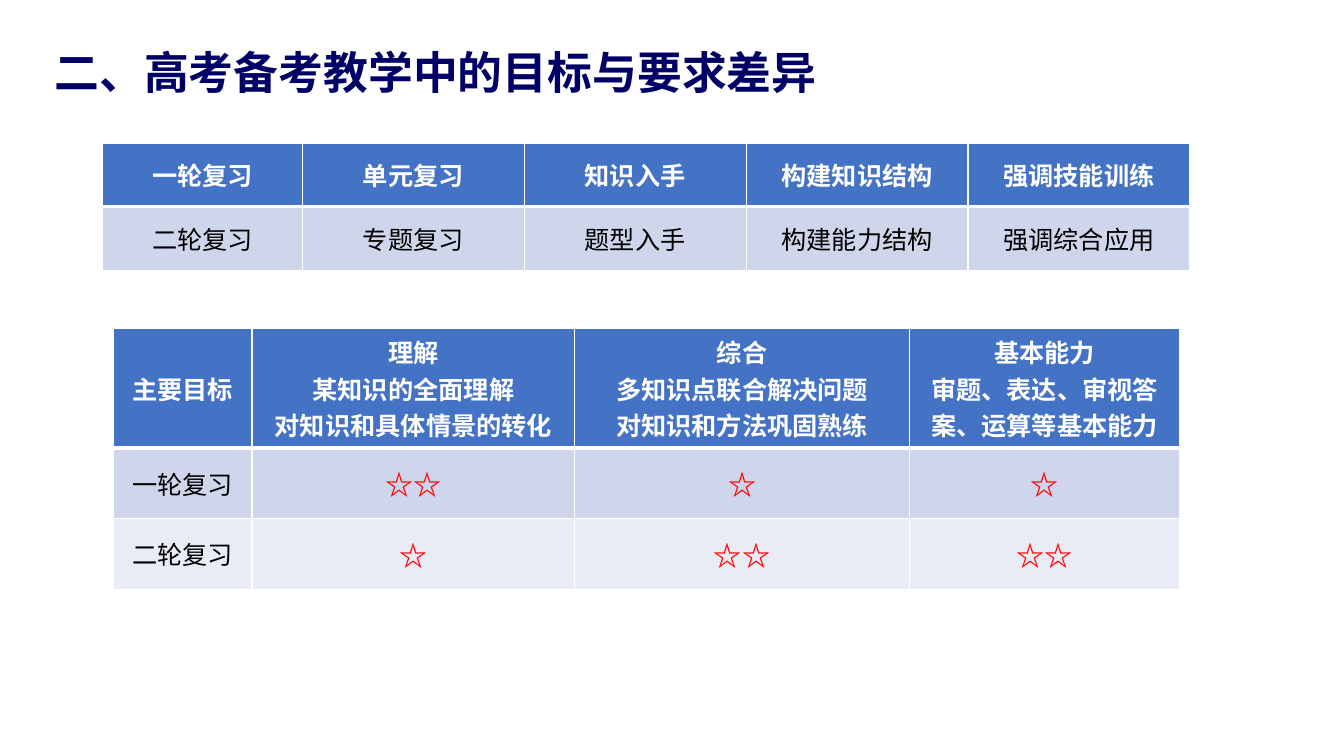
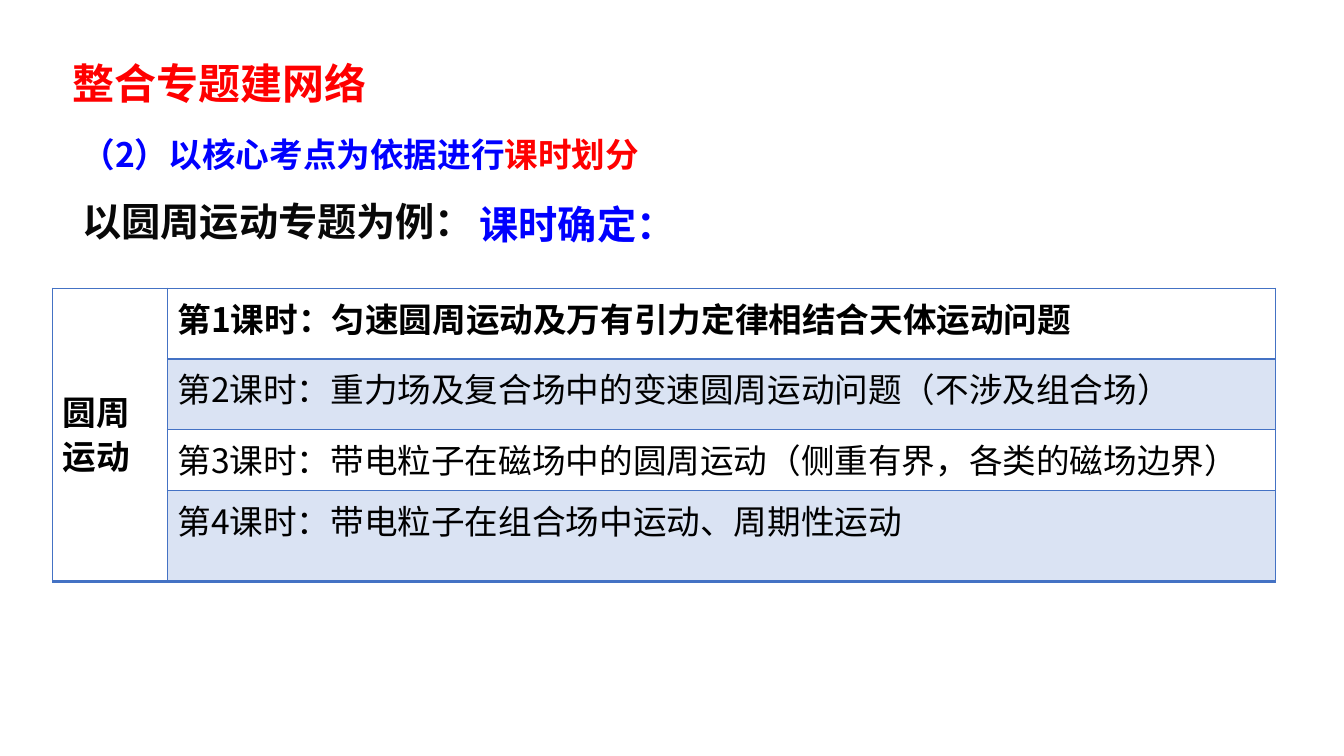
import pptx
import pptx.util
import pptx.dml.color
import pptx.enum.text
import pptx.oxml
import pptx.oxml.ns
import lxml.etree

RGB = pptx.dml.color.RGBColor
ALIGN = pptx.enum.text.PP_ALIGN
ANCHOR = pptx.enum.text.MSO_ANCHOR
FIT = pptx.enum.text.MSO_AUTO_SIZE

PX = 9144
WIDE, HIGH = 1333, 750

WHITE = RGB(0xFF, 0xFF, 0xFF)
BLACK = RGB(0x00, 0x00, 0x00)
INK = RGB(0x08, 0x08, 0x08)
NAVY = RGB(0x00, 0x00, 0x66)
RED = RGB(0xFF, 0x00, 0x00)
BLUE = RGB(0x00, 0x00, 0xFF)
HEAD = RGB(0x44, 0x72, 0xC4)
BAND = RGB(0xCF, 0xD5, 0xEA)
PALE = RGB(0xE9, 0xEB, 0xF5)
TINT = RGB(0xDA, 0xE3, 0xF3)

SANS = "Noto Sans CJK SC"


def style(size, color, bold=True, name=SANS):
    return {"size": pptx.util.Pt(size), "bold": bold, "name": name, "color": color}


TITLE = style(32, NAVY, name="Calibri")
TOPIC = style(30, RED)
POINT = style(24, BLUE)
CASE = style(28, INK)
HOURS = style(28, BLUE)
LABEL = style(18, WHITE)
PLAIN = style(18, BLACK, False)
STAR = style(20, RED)
FIRST = style(24, BLACK)
LESSON = style(24, BLACK, False)


def emu(*box):
    return [pptx.util.Emu(n * PX) for n in box]


def put(item, values):
    for name, value in values.items():
        setattr(item, name, value)


def write(para, text, form):
    run = para.add_run()
    run.text = text
    put(run.font, {k: v for k, v in form.items() if k != "color"})
    run.font.color.rgb = form["color"]
    east = lxml.etree.SubElement(run._r.get_or_add_rPr(), pptx.oxml.ns.qn("a:ea"))
    east.set("typeface", SANS)


def label(slide, box, runs, inset=True, **form):
    frame = slide.shapes.add_textbox(*emu(*box)).text_frame
    put(frame, {"word_wrap": True, "auto_size": FIT.NONE})
    if not inset:
        sides = ("left", "top", "right", "bottom")
        put(frame, {"margin_" + side: 0 for side in sides})
    para = frame.paragraphs[0]
    put(para, form)
    for text, look in runs:
        write(para, text, look)


def edge(cell, color, widths):
    props = cell._tc.get_or_add_tcPr()
    for side, width in zip("LRTB", widths):
        props.append(pptx.oxml.parse_xml(
            f'<a:ln{side} {pptx.oxml.ns.nsdecls("a")} w="{pptx.util.Pt(width)}">'
            f'<a:solidFill><a:srgbClr val="{color}"/></a:solidFill></a:ln{side}>'))


def grid(slide, spot, cols, rows, cells, look, line, rule, foot, align, anchor):
    box = (*spot, sum(cols), sum(rows))
    table = slide.shapes.add_table(len(rows), len(cols), *emu(*box)).table
    put(table, {"first_row": False, "horz_banding": False})
    for col, width in zip(table.columns, emu(*cols)):
        col.width = width
    for row, height in zip(table.rows, emu(*rows)):
        row.height = height
    bars = [1, rule] + [1] * (len(rows) - 2) + [foot]
    for y, texts in enumerate(cells):
        for x, text in enumerate(texts):
            cell = table.cell(y, x)
            form, fill = look(y, x)
            edge(cell, line, (1, 1, bars[y], bars[y + 1]))
            if fill is None:
                cell.fill.background()
            else:
                cell.fill.solid()
                cell.fill.fore_color.rgb = fill
            cell.vertical_anchor = anchor
            frame = cell.text_frame
            for n, part in enumerate(text.split("\n") if text else []):
                para = frame.add_paragraph() if n else frame.paragraphs[0]
                para.alignment = align
                write(para, part, form)
    return table


def review(slide, spot, cols, rows, cells, body):
    def look(y, x):
        if y == 0:
            return LABEL, HEAD
        return (body if x else PLAIN), (BAND if y % 2 else PALE)

    grid(slide, spot, cols, rows, cells, look, WHITE, 3, 1, ALIGN.CENTER, ANCHOR.MIDDLE)


def plan(slide, spot, cols, rows, lessons):
    def look(y, x):
        return (LESSON if y else FIRST), (TINT if x and y % 2 else None)

    cells = [("" if n else "圆周运动", f"第{n + 1}课时：{text}")
             for n, text in enumerate(lessons)]
    table = grid(slide, spot, cols, rows, cells, look, HEAD, 2, 2, ALIGN.LEFT, ANCHOR.TOP)
    side = table.cell(0, 0)
    side.merge(table.cell(len(rows) - 1, 0))
    put(side, {"vertical_anchor": ANCHOR.MIDDLE, "margin_top": 0, "margin_bottom": 0})
    side.text_frame.paragraphs[0].line_spacing = pptx.util.Pt(32)


def goals(slide):
    label(slide, (54, 50, 982, 58), [("二、高考备考教学中的目标与要求差异", TITLE)],
          inset=False, line_spacing=0.9, space_after=pptx.util.Pt(8))
    review(slide, (102, 142), [198] + [220] * 4, [63] * 2, [
        ("一轮复习", "单元复习", "知识入手", "构建知识结构", "强调技能训练"),
        ("二轮复习", "专题复习", "题型入手", "构建能力结构", "强调综合应用"),
    ], PLAIN)
    review(slide, (112, 326), [138, 320, 332, 268], [118, 70, 70], [
        ("主要目标",
         "理解\n某知识的全面理解\n对知识和具体情景的转化",
         "综合\n多知识点联合解决问题\n对知识和方法巩固熟练",
         "基本能力\n审题、表达、审视答案、运算等基本能力"),
        ("一轮复习", "☆☆", "☆", "☆"),
        ("二轮复习", "☆", "☆☆", "☆☆"),
    ], STAR)


def topics(slide):
    label(slide, (72, 57, 987, 50), [("整合专题建网络", TOPIC)], inset=False)
    label(slide, (71, 128, 1108, 50), [
        ("（2）以核心考点为依据进行", POINT),
        ("课时划分", {**POINT, "color": RED}),
    ])
    label(slide, (72, 191, 420, 57), [("以圆周运动专题为例：", CASE)])
    label(slide, (466, 194, 223, 57), [("课时确定：", HOURS)])
    plan(slide, (52, 286), [114, 1099], [70, 70, 61, 90], [
        "匀速圆周运动及万有引力定律相结合天体运动问题",
        "重力场及复合场中的变速圆周运动问题（不涉及组合场）",
        "带电粒子在磁场中的圆周运动（侧重有界，各类的磁场边界）",
        "带电粒子在组合场中运动、周期性运动",
    ])


def main():
    deck = pptx.Presentation()
    deck.slide_width, deck.slide_height = emu(WIDE, HIGH)
    for build in (goals, topics):
        build(deck.slides.add_slide(deck.slide_layouts[6]))
    deck.save("out.pptx")


if __name__ == "__main__":
    main()
